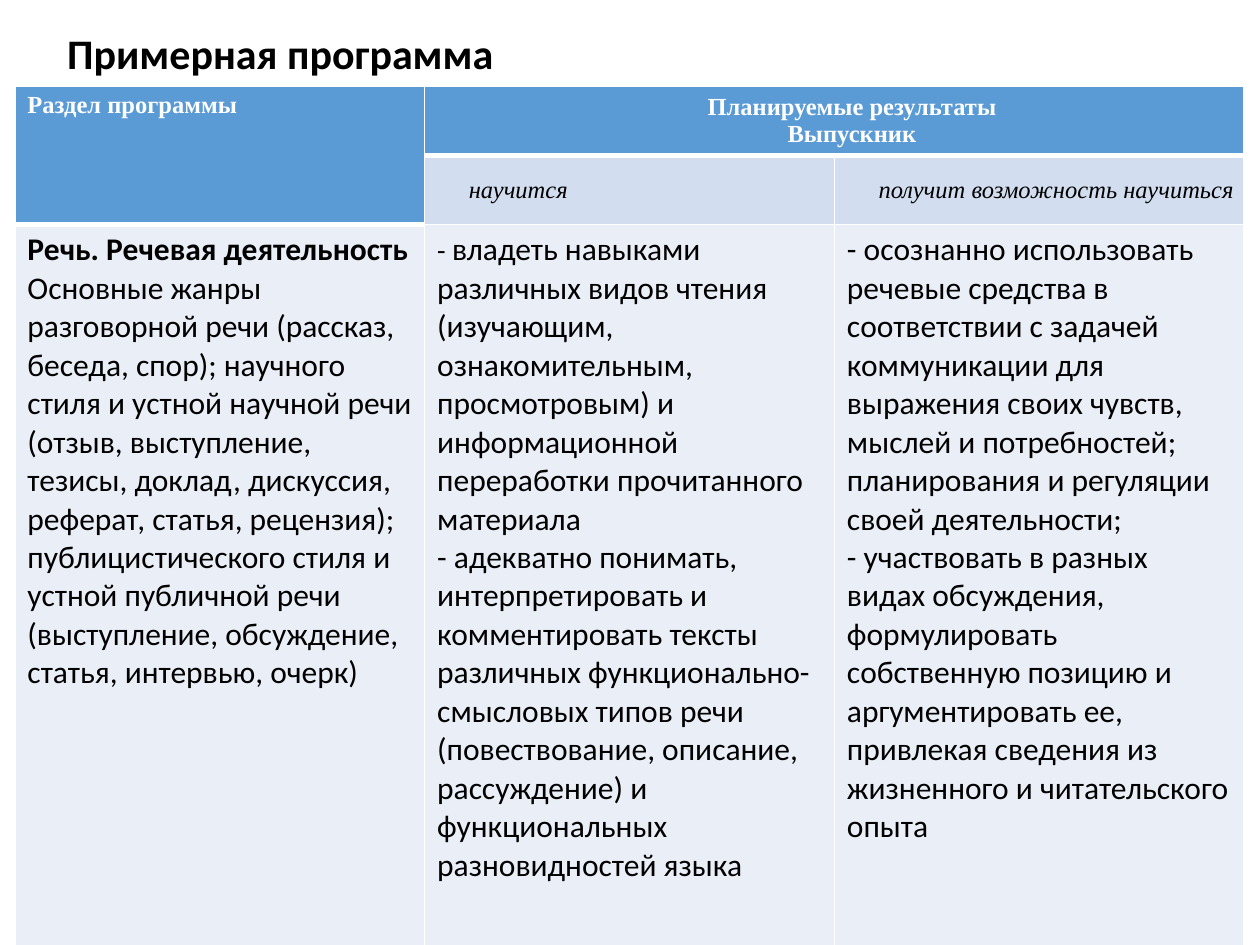
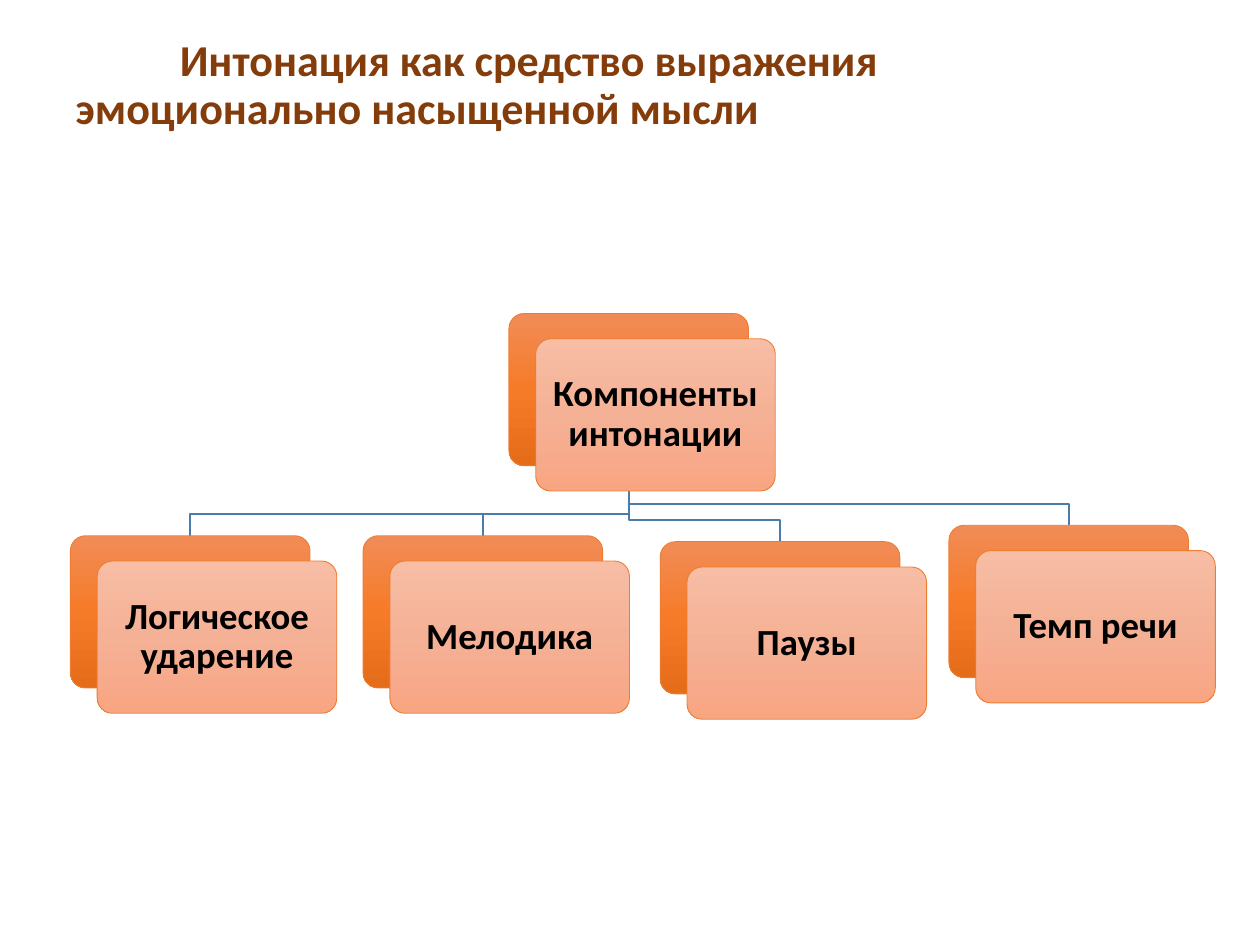
from copy import deepcopy
from dataclasses import dataclass

from lxml.etree import SubElement
from pptx import Presentation
from pptx.dml.color import RGBColor
from pptx.enum.shapes import MSO_SHAPE
from pptx.enum.text import MSO_ANCHOR, MSO_AUTO_SIZE, PP_ALIGN
from pptx.oxml.ns import qn
from pptx.util import Cm, Pt


@dataclass(frozen=True)
class Theme:
    font: str = "Calibri"
    header_font: str = "Times New Roman"
    black: str = "000000"
    white: str = "FFFFFF"
    brown: str = "843C0B"
    header_blue: str = "5B9BD5"
    subheader_blue: str = "D2DEEF"
    body_blue: str = "EAEFF7"
    branch_blue: str = "497CAB"
    outline: str = "ED7D31"
    back_gradient: tuple = ("F18C57", "F67B28", "E56C19")
    front_gradient: tuple = ("F7BDA5", "F5B196", "F8A582")
    program_title: float = 24
    intonation_title: float = 25.2
    header: float = 14
    body: float = 18
    dash: float = 16
    component: float = 21


THEME = Theme()

PROGRAM_TITLE = "Примерная программа"
SECTION_HEADER = "Раздел программы"
RESULTS_HEADER = "Планируемые результаты\nВыпускник"
RESULT_KINDS = ["научится", "получит возможность научиться"]
SECTION = [
    "Речь. Речевая деятельность",
    "Основные жанры разговорной речи (рассказ, беседа, спор); научного стиля и устной "
    "научной речи (отзыв, выступление, тезисы, доклад, дискуссия, реферат, статья, "
    "рецензия); публицистического стиля и устной публичной речи (выступление, "
    "обсуждение, статья, интервью, очерк)",
]
WILL_LEARN = [
    "владеть навыками различных видов чтения (изучающим, ознакомительным, "
    "просмотровым) и информационной переработки прочитанного материала",
    "- адекватно понимать, интерпретировать и комментировать тексты различных "
    "функционально-смысловых типов речи (повествование, описание, рассуждение) "
    "и функциональных разновидностей языка",
]
MAY_LEARN = [
    "- осознанно использовать речевые средства в соответствии с задачей коммуникации "
    "для выражения своих чувств, мыслей и потребностей; планирования и регуляции "
    "своей деятельности;",
    "- участвовать в разных видах обсуждения, формулировать собственную позицию и "
    "аргументировать ее, привлекая сведения из жизненного и читательского опыта",
]
COLUMN_WIDTH = 8.26
ROW_HEIGHTS = [1.4, 1.4, 16.94]

INTONATION_TITLE = "Интонация как средство выражения эмоционально насыщенной мысли"
ROOT = ("Компоненты интонации", 10.26, 6.32)
COMPONENTS = [
    ("Логическое ударение", 1.42, 10.8),
    ("Мелодика", 7.32, 10.8),
    ("Паузы", 13.31, 10.92),
    ("Темп речи", 19.13, 10.59),
]
CARD_WIDTH, CARD_HEIGHT = 4.83, 3.07
CARD_SHIFT = (0.54, 0.51)
BRANCH_DROP = 0.43


def style(run, size, color=THEME.black, font=THEME.font, bold=False, italic=False):
    run.font.name = font
    run.font.size = Pt(size)
    run.font.bold = bold
    run.font.italic = italic
    run.font.color.rgb = RGBColor.from_string(color)


def indent_first_line(paragraph, indent):
    properties = paragraph._p.get_or_add_pPr()
    properties.set("marL", "0")
    properties.set("indent", str(Cm(indent)))


def add_titled_slide(deck, text, box, size, color):
    slide = deck.slides.add_slide(deck.slide_layouts[5])
    title = slide.shapes.title
    title.left, title.top, title.width, title.height = map(Cm, box)
    frame = title.text_frame
    frame.text = text
    frame.auto_size = MSO_AUTO_SIZE.NONE
    frame.vertical_anchor = MSO_ANCHOR.MIDDLE
    paragraph = frame.paragraphs[0]
    paragraph.alignment = PP_ALIGN.LEFT
    paragraph.line_spacing = 0.9
    style(paragraph.runs[0], size, color, bold=True)
    return slide


def paint_cell(cell, fill, bottom=1):
    properties = cell._tc.get_or_add_tcPr()
    for side in "LRTB":
        width = bottom if side == "B" else 1
        line = SubElement(properties, qn(f"a:ln{side}"), w=str(Pt(width)))
        paint = SubElement(line, qn("a:solidFill"))
        SubElement(paint, qn("a:srgbClr"), val=THEME.white)
    cell.fill.solid()
    cell.fill.fore_color.rgb = RGBColor.from_string(fill)


def write_header(cell, text, indented=True, alignment=PP_ALIGN.LEFT, **look):
    cell.text_frame.text = text
    if indented:
        cell.vertical_anchor = MSO_ANCHOR.MIDDLE
        cell.margin_left = cell.margin_right = Cm(0.18)
        cell.margin_top = cell.margin_bottom = 0
    for paragraph in cell.text_frame.paragraphs:
        paragraph.alignment = alignment
        if indented:
            indent_first_line(paragraph, 0.71)
        style(paragraph.runs[0], THEME.header, font=THEME.header_font, **look)


def add_program_slide(deck):
    slide = add_titled_slide(deck, PROGRAM_TITLE, (1.1, 0.53, 23.04, 1.19),
                             THEME.program_title, THEME.black)
    table = slide.shapes.add_table(3, 3, Cm(0.3), Cm(1.73), Cm(3 * COLUMN_WIDTH),
                                   Cm(sum(ROW_HEIGHTS))).table
    for column in table.columns:
        column.width = Cm(COLUMN_WIDTH)
    for row, height in zip(table.rows, ROW_HEIGHTS):
        row.height = Cm(height)

    fills = [THEME.header_blue, THEME.subheader_blue, THEME.body_blue]
    for row, fill in enumerate(fills):
        for column in range(3):
            is_header = row == 0 or (row, column) == (1, 0)
            paint_cell(table.cell(row, column), THEME.header_blue if is_header else fill,
                       3 if is_header else 1)
    table.cell(0, 0).merge(table.cell(1, 0))
    table.cell(0, 1).merge(table.cell(0, 2))

    write_header(table.cell(0, 0), SECTION_HEADER, False, color=THEME.white, bold=True)
    write_header(table.cell(0, 1), RESULTS_HEADER, alignment=PP_ALIGN.CENTER,
                 color=THEME.white, bold=True)
    for column, kind in enumerate(RESULT_KINDS, 1):
        write_header(table.cell(1, column), kind, italic=True)

    for column, lines in enumerate([SECTION, WILL_LEARN, MAY_LEARN]):
        frame = table.cell(2, column).text_frame
        frame.text = "\n".join(lines)
        for paragraph in frame.paragraphs:
            style(paragraph.runs[0], THEME.body)
    table.cell(2, 0).text_frame.paragraphs[0].runs[0].font.bold = True

    opening = table.cell(2, 1).text_frame.paragraphs[0]
    opening.text = "- "
    style(opening.runs[0], THEME.dash)
    reading = opening.add_run()
    reading.text = WILL_LEARN[0]
    style(reading, THEME.body)


def add_branch(slide, left, top):
    stem_x = ROOT[1] + CARD_WIDTH / 2
    stem_y = ROOT[2] + CARD_HEIGHT
    child_x = left + CARD_WIDTH / 2
    bend_y = top - BRANCH_DROP
    outline = slide.shapes.build_freeform(Cm(stem_x), Cm(stem_y))
    outline.add_line_segments([(Cm(x), Cm(y)) for x, y in
                               [(stem_x, bend_y), (child_x, bend_y), (child_x, top)]],
                              close=False)
    branch = outline.convert_to_shape()
    branch.shadow.inherit = False
    branch.fill.background()
    branch.line.color.rgb = RGBColor.from_string(THEME.branch_blue)
    branch.line.width = Pt(1)


def add_plate(slide, left, top, gradient):
    plate = slide.shapes.add_shape(MSO_SHAPE.ROUNDED_RECTANGLE, Cm(left), Cm(top),
                                   Cm(CARD_WIDTH), Cm(CARD_HEIGHT))
    plate.adjustments[0] = 0.1
    plate.shadow.inherit = False
    plate.line.color.rgb = RGBColor.from_string(THEME.outline)
    plate.line.width = Pt(0.5)
    plate.fill.gradient()
    plate.fill.gradient_angle = 270
    stop_list = plate._element.spPr.find(".//" + qn("a:gsLst"))
    while len(stop_list) > 2:
        stop_list.remove(stop_list[-1])
    stop_list.insert(1, deepcopy(stop_list[0]))
    for stop, color, position in zip(plate.fill.gradient_stops, gradient, (0, 0.5, 1)):
        stop.color.rgb = RGBColor.from_string(color)
        stop.position = position
    return plate


def add_card(slide, label, left, top):
    add_plate(slide, left, top, THEME.back_gradient)
    front = add_plate(slide, left + CARD_SHIFT[0], top + CARD_SHIFT[1], THEME.front_gradient)
    frame = front.text_frame
    frame.text = label
    frame.word_wrap = True
    frame.vertical_anchor = MSO_ANCHOR.MIDDLE
    frame.margin_left = frame.margin_right = Cm(0.13)
    paragraph = frame.paragraphs[0]
    paragraph.alignment = PP_ALIGN.CENTER
    paragraph.line_spacing = 0.9
    style(paragraph.runs[0], THEME.component, bold=True)


def add_intonation_slide(deck):
    slide = add_titled_slide(deck, INTONATION_TITLE, (1.27, 0.76, 22.86, 1.96),
                             THEME.intonation_title, THEME.brown)
    title_frame = slide.shapes.title.text_frame
    title_frame.margin_right = Cm(3)
    indent_first_line(title_frame.paragraphs[0], 2.1)
    for _, left, top in reversed(COMPONENTS):
        add_branch(slide, left, top)
    for card in [ROOT, *COMPONENTS]:
        add_card(slide, *card)


def main():
    deck = Presentation()
    deck.slide_width, deck.slide_height = Cm(25.4), Cm(19.05)
    add_program_slide(deck)
    add_intonation_slide(deck)
    deck.save("out.pptx")


if __name__ == "__main__":
    main()
